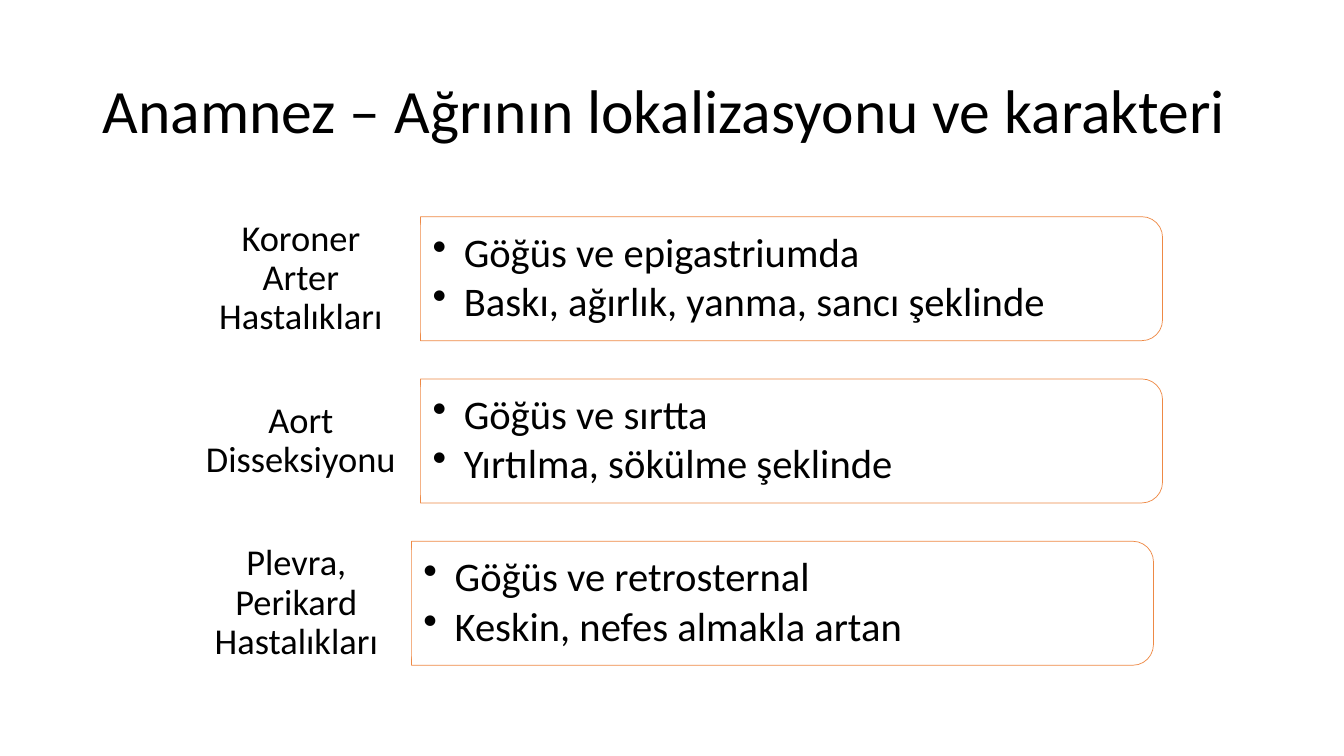
import pptx
import pptx.util
import pptx.dml.color
import pptx.enum.shapes
import pptx.enum.text
import pptx.oxml.ns
import lxml.etree

BLACK = pptx.dml.color.RGBColor(0x00, 0x00, 0x00)
WHITE = pptx.dml.color.RGBColor(0xFF, 0xFF, 0xFF)
ORANGE = pptx.dml.color.RGBColor(0xED, 0x7D, 0x31)
SHAPE = pptx.enum.shapes.MSO_SHAPE
ALIGN = pptx.enum.text.PP_ALIGN
ROW_TOP, ROW_PITCH = 200, 161
LABEL_LEFT, LABEL_H = 180, 153
BAR_W, BAR_H = 736, 123
ROWS = [
    ("Koroner Arter Hastalıkları", 237,
     ["Göğüs ve epigastriumda", "Baskı, ağırlık, yanma, sancı şeklinde"]),
    ("Aort Disseksiyonu", 237,
     ["Göğüs ve sırtta", "Yırtılma, sökülme şeklinde"]),
    ("Plevra, Perikard Hastalıkları", 228,
     ["Göğüs ve retrosternal", "Keskin, nefes almakla artan"]),
]


def px(n):
    return pptx.util.Emu(round(n * 9144))


def add_element(parent, tag, **attrs):
    return lxml.etree.SubElement(parent, pptx.oxml.ns.qn(tag), attrs)


class Deck:
    """Draws the slide's titles, labels and bulleted bars in one style."""

    font = "Calibri"

    def __init__(self, prs):
        self.s = prs.slides.add_slide(prs.slide_layouts[6])

    def fill_text(self, sp, lines, size, align, insets, after=0, bullet=False):
        tf = sp.text_frame
        tf.word_wrap = True
        tf.vertical_anchor = pptx.enum.text.MSO_ANCHOR.MIDDLE
        tf.margin_left = tf.margin_right = px(insets[0])
        tf.margin_top = tf.margin_bottom = px(insets[1])
        for i, line in enumerate(lines):
            p = tf.add_paragraph() if i else tf.paragraphs[0]
            p.text = line
            p.alignment = align
            p.line_spacing = 0.9
            p.space_after = pptx.util.Pt(after)
            p.font.name = self.font
            p.font.size = pptx.util.Pt(size)
            p.font.color.rgb = BLACK
            if bullet:
                pPr = p._p.get_or_add_pPr()
                pPr.set("marL", str(px(31)))
                pPr.set("indent", str(px(-31)))
                mark = add_element(pPr, "a:buChar", char="•")
                pPr.find(pptx.oxml.ns.qn("a:defRPr")).addprevious(mark)

    def text(self, x, y, w, h, lines, size, insets, **style):
        sp = self.s.shapes.add_textbox(px(x), px(y), px(w), px(h))
        self.fill_text(sp, lines, size, ALIGN.LEFT, insets, **style)

    def shape(self, kind, x, y, w, h):
        sp = self.s.shapes.add_shape(kind, px(x), px(y), px(w), px(h))
        sp.shadow.inherit = False
        sp.fill.solid()
        sp.fill.fore_color.rgb = WHITE
        sp.line.fill.background()
        return sp

    def bar(self, x, y, w, h):
        shift = (w - h) / 2
        sp = self.shape(SHAPE.ROUND_2_SAME_RECTANGLE, x + shift, y - shift, h, w)
        sp.rotation = 90
        sp.line.color.rgb = ORANGE
        sp.line.width = pptx.util.Pt(0.5)
        for color in sp._element.spPr.iter(pptx.oxml.ns.qn("a:srgbClr")):
            add_element(color, "a:alpha", val="90000")

    def label(self, x, y, w, h, text):
        sp = self.shape(SHAPE.ROUNDED_RECTANGLE, x, y, w, h)
        self.fill_text(sp, [text], 26, ALIGN.CENTER, (11, 5))


def main():
    prs = pptx.Presentation()
    prs.slide_width, prs.slide_height = px(1333), px(750)
    deck = Deck(prs)
    deck.text(92, 40, 1150, 145, ["Anamnez – Ağrının lokalizasyonu ve karakteri"],
              44, (10, 5))
    for i, (name, label_w, symptoms) in enumerate(ROWS):
        y = ROW_TOP + i * ROW_PITCH
        x = LABEL_LEFT + label_w
        deck.bar(x, y + 15, BAR_W, BAR_H)
        deck.text(x, y + 21, 730, 111, symptoms, 29, (12, 6), after=4, bullet=True)
        deck.label(LABEL_LEFT, y, label_w, LABEL_H, name)
    prs.save("out.pptx")


if __name__ == "__main__":
    main()
